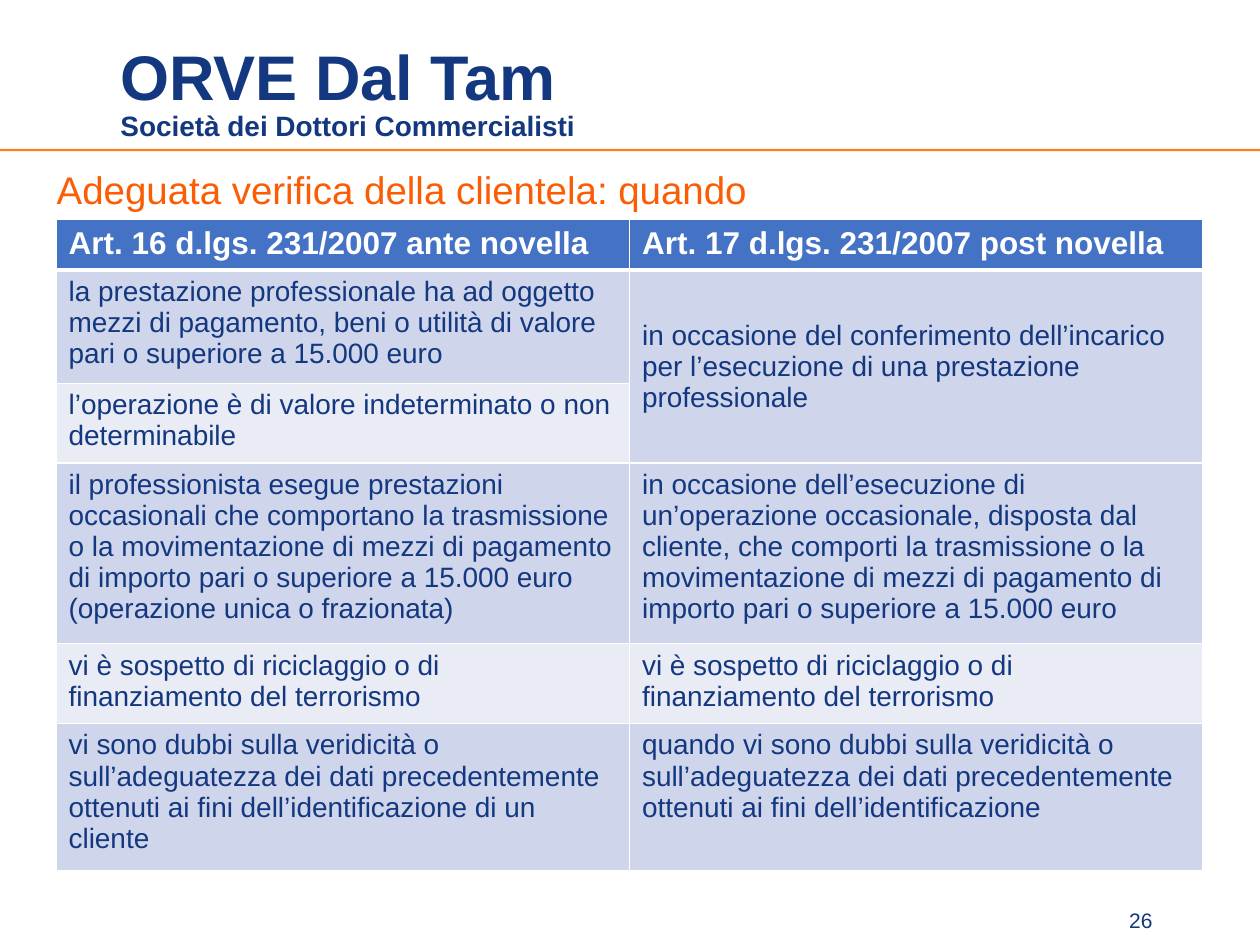
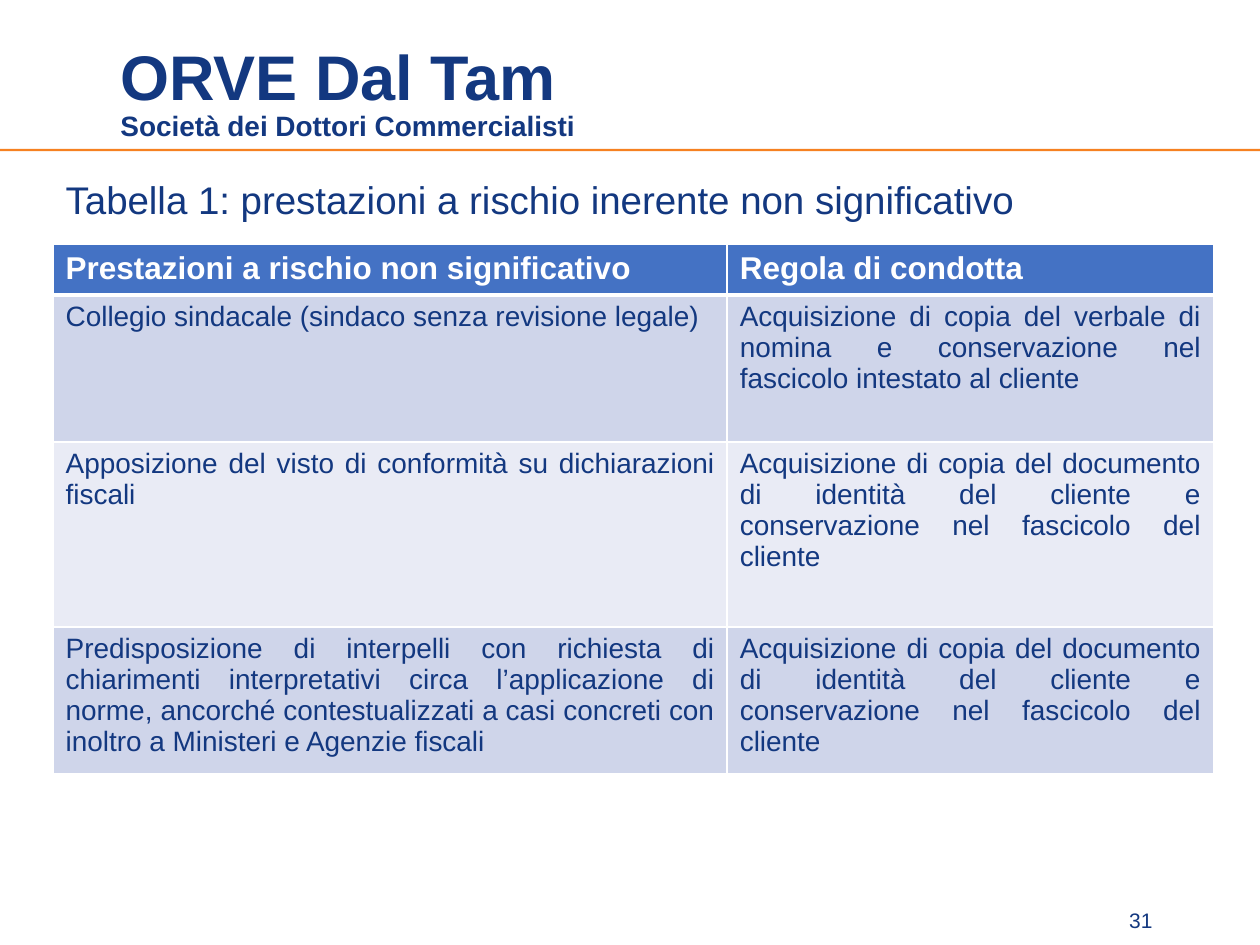
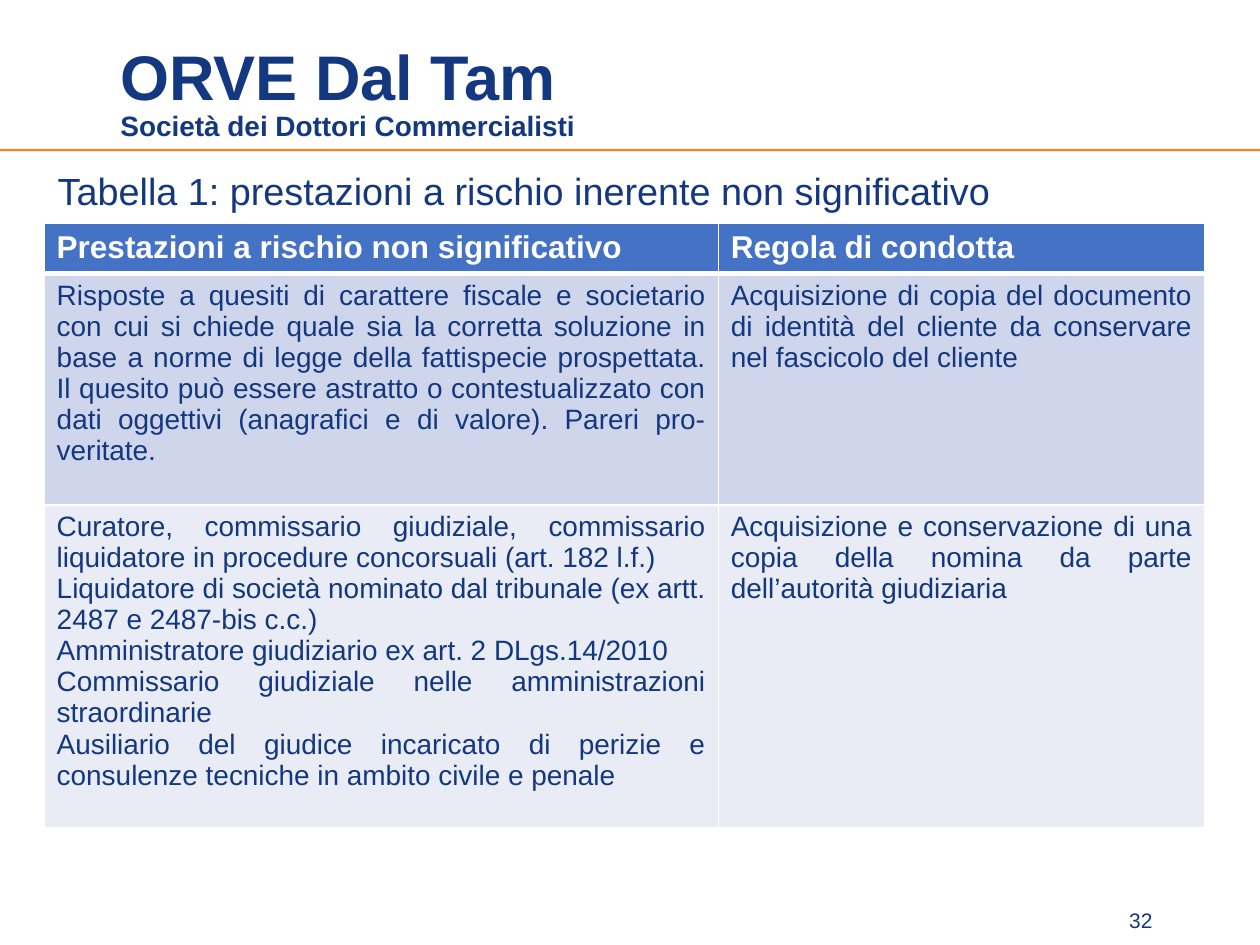
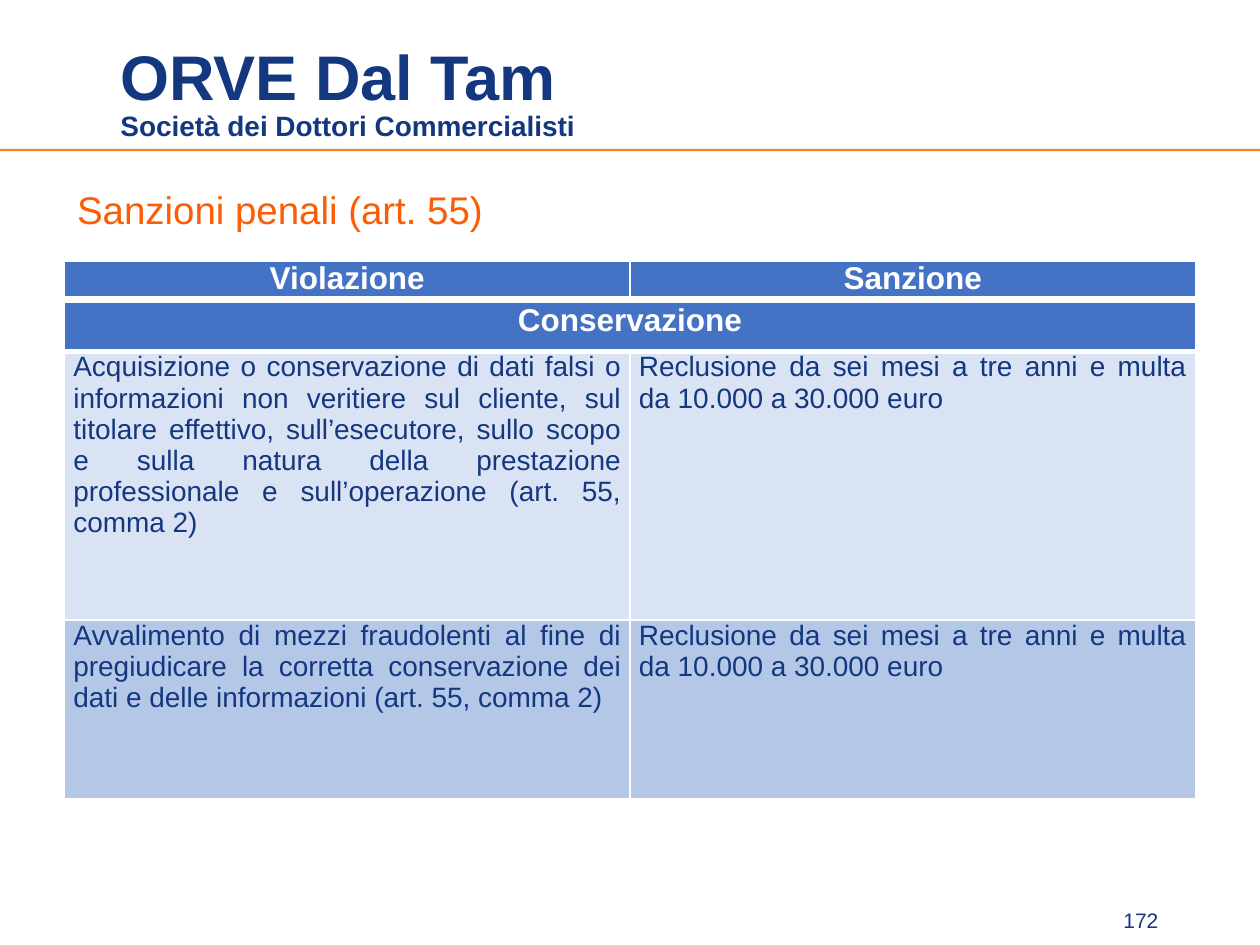
from collections import namedtuple
from dataclasses import dataclass

from lxml.etree import SubElement
from pptx import Presentation
from pptx.dml.color import RGBColor
from pptx.enum.shapes import MSO_SHAPE
from pptx.enum.text import MSO_ANCHOR, MSO_AUTO_SIZE, PP_ALIGN
from pptx.oxml.ns import qn
from pptx.util import Cm, Pt

Box = namedtuple("Box", "left top width height")


@dataclass(frozen=True)
class Theme:
    font: str = "Arial"
    navy: str = "133880"
    orange: str = "FB5D05"
    rule: str = "F68121"
    white: str = "FFFFFF"
    header: str = "4472C4"
    bands: tuple = ("CFD5EA", "E9EBF5")
    penalty_bands: tuple = ("DAE3F3", "B4C7E7")
    brand_size: float = 36
    title_size: float = 22
    header_size: float = 18
    body_size: float = 16
    number_size: float = 12
    thin: float = 1
    thick: float = 3


THEME = Theme()
SLIDE_WIDTH, SLIDE_HEIGHT = 25.4, 19.05
BRAND_BOX = Box(2.18, 1.55, 17.32, 1.47)
RULE_BOX = Box(0, 3, SLIDE_WIDTH, 0.05)
NUMBER_BOX = Box(21.9, 18.19, 2.2, 0.74)
BRAND_LINES = (("ORVE Dal Tam", THEME.brand_size),
               ("Società dei Dottori Commercialisti", THEME.body_size))

RISK_HEADER = ["Prestazioni a rischio non significativo", "Regola di condotta"]
RISK_TITLE = "Tabella 1: prestazioni a rischio inerente non significativo"
RISK_COLUMNS = (13.59, 9.8)
IDENTITY_RULE = ("Acquisizione di copia del documento di identità del cliente "
                 "e conservazione nel fascicolo del cliente")
SUSPICION = "vi è sospetto di riciclaggio o di finanziamento del terrorismo"
PENALTY = "Reclusione da sei mesi a tre anni e multa da 10.000 a 30.000 euro"

# None marks a cell that is joined to the one above it or to its left.
DUE_DILIGENCE = [
    ["Art. 16 d.lgs. 231/2007 ante novella", "Art. 17 d.lgs. 231/2007 post novella"],
    ["la prestazione professionale ha ad oggetto mezzi di pagamento, beni o utilità "
     "di valore pari o superiore a 15.000 euro",
     "in occasione del conferimento dell’incarico per l’esecuzione di una prestazione "
     "professionale"],
    ["l’operazione è di valore indeterminato o non determinabile", None],
    ["il professionista esegue prestazioni occasionali che comportano la trasmissione "
     "o la movimentazione di mezzi di pagamento di importo pari o superiore a 15.000 "
     "euro (operazione unica o frazionata)",
     "in occasione dell’esecuzione di un’operazione occasionale, disposta dal cliente, "
     "che comporti la trasmissione o la movimentazione di mezzi di pagamento di "
     "importo pari o superiore a 15.000 euro"],
    [SUSPICION, SUSPICION],
    ["vi sono dubbi sulla veridicità o sull’adeguatezza dei dati precedentemente "
     "ottenuti ai fini dell’identificazione di un cliente",
     "quando vi sono dubbi sulla veridicità o sull’adeguatezza dei dati "
     "precedentemente ottenuti ai fini dell’identificazione"],
]
LOW_RISK = [
    RISK_HEADER,
    ["Collegio sindacale (sindaco senza revisione legale)",
     "Acquisizione di copia del verbale di nomina e conservazione nel fascicolo "
     "intestato al cliente"],
    ["Apposizione del visto di conformità su dichiarazioni fiscali", IDENTITY_RULE],
    ["Predisposizione di interpelli con richiesta di chiarimenti interpretativi circa "
     "l’applicazione di norme, ancorché contestualizzati a casi concreti con inoltro "
     "a Ministeri e Agenzie fiscali", IDENTITY_RULE],
]
LOW_RISK_CONTINUED = [
    RISK_HEADER,
    ["Risposte a quesiti di carattere fiscale e societario con cui si chiede quale sia "
     "la corretta soluzione in base a norme di legge della fattispecie prospettata. "
     "Il quesito può essere astratto o contestualizzato con dati oggettivi (anagrafici "
     "e di valore). Pareri pro-veritate.",
     "Acquisizione di copia del documento di identità del cliente da conservare nel "
     "fascicolo del cliente"],
    ["Curatore, commissario giudiziale, commissario liquidatore in procedure "
     "concorsuali (art. 182 l.f.)\n"
     "Liquidatore di società nominato dal tribunale (ex artt. 2487 e 2487-bis c.c.)\n"
     "Amministratore giudiziario ex art. 2 DLgs.14/2010\n"
     "Commissario giudiziale nelle amministrazioni straordinarie\n"
     "Ausiliario del giudice incaricato di perizie e consulenze tecniche in ambito "
     "civile e penale",
     "Acquisizione e conservazione di una copia della nomina da parte dell’autorità "
     "giudiziaria"],
]
PENALTY_HEADER = [["Violazione", "Sanzione"]]
PENALTIES = [
    ["Conservazione", None],
    ["Acquisizione o conservazione di dati falsi o informazioni non veritiere sul "
     "cliente, sul titolare effettivo, sull’esecutore, sullo scopo e sulla natura "
     "della prestazione professionale e sull’operazione (art. 55, comma 2)", PENALTY],
    ["Avvalimento di mezzi fraudolenti al fine di pregiudicare la corretta "
     "conservazione dei dati e delle informazioni (art. 55, comma 2)", PENALTY],
]


def cm(box):
    return [Cm(length) for length in box]


def style(paragraph, size, color, bold=False, align=PP_ALIGN.LEFT):
    paragraph.alignment = align
    for run in paragraph.runs:
        run.font.name = THEME.font
        run.font.size = Pt(size)
        run.font.bold = bold
        run.font.color.rgb = RGBColor.from_string(color)


def add_brand(slide, box):
    frame = slide.shapes.add_textbox(*cm(box)).text_frame
    frame.word_wrap = True
    frame.text = "\n".join(text for text, _ in BRAND_LINES)
    for paragraph, (_, size) in zip(frame.paragraphs, BRAND_LINES):
        paragraph.line_spacing = Pt(17)
        style(paragraph, size, THEME.navy, bold=True)


def add_rule(slide, box):
    rule = slide.shapes.add_shape(MSO_SHAPE.RECTANGLE, *cm(box))
    rule.shadow.inherit = False
    rule.fill.solid()
    rule.fill.fore_color.rgb = RGBColor.from_string(THEME.rule)
    rule.line.fill.background()


def add_page_number(slide, box, number):
    frame = slide.shapes.add_textbox(*cm(box)).text_frame
    frame.word_wrap = True
    frame.vertical_anchor = MSO_ANCHOR.BOTTOM
    frame.text = str(number)
    style(frame.paragraphs[0], THEME.number_size, THEME.navy, align=PP_ALIGN.CENTER)


def set_title(slide, box, text, color, size):
    title = slide.shapes.title
    title.left, title.top, title.width, title.height = cm(box)
    frame = title.text_frame
    frame.text = text
    frame.word_wrap = True
    frame.auto_size = MSO_AUTO_SIZE.NONE
    frame.vertical_anchor = MSO_ANCHOR.TOP
    frame.paragraphs[0].line_spacing = 0.9
    style(frame.paragraphs[0], size, color)


def set_borders(cell, top, bottom):
    properties = cell._tc.get_or_add_tcPr()
    widths = {"lnL": THEME.thin, "lnR": THEME.thin, "lnT": top, "lnB": bottom}
    for position, (side, width) in enumerate(widths.items()):
        line = SubElement(properties, qn(f"a:{side}"), w=str(Pt(width)))
        fill = SubElement(line, qn("a:solidFill"))
        SubElement(fill, qn("a:srgbClr"), val=THEME.white)
        properties.insert(position, line)


def join_cells(table, rows):
    for r, row in enumerate(rows):
        for c, text in enumerate(row):
            if text is None:
                origin = table.cell(0, 0) if r == 0 else table.cell(r - 1, c)
                origin.merge(table.cell(r, c))
                origin.vertical_anchor = MSO_ANCHOR.MIDDLE if r else MSO_ANCHOR.TOP


def add_grid(slide, left, top, columns, heights, rows, bands=THEME.bands,
             header_align=PP_ALIGN.LEFT, body_align=PP_ALIGN.JUSTIFY, margins=None):
    """Table with a header row and banded body; margins are (side, top and bottom)."""
    box = Box(left, top, sum(columns), sum(heights))
    table = slide.shapes.add_table(len(rows), len(columns), *cm(box)).table
    for column, width in zip(table.columns, columns):
        column.width = Cm(width)
    for r, (texts, height) in enumerate(zip(rows, heights)):
        table.rows[r].height = Cm(height)
        header = r == 0
        fill = THEME.header if header else bands[(r - 1) % len(bands)]
        for c, text in enumerate(texts):
            cell = table.cell(r, c)
            if margins:
                cell.margin_left = cell.margin_right = Cm(margins[0])
                cell.margin_top = cell.margin_bottom = Cm(margins[1])
            cell.fill.solid()
            cell.fill.fore_color.rgb = RGBColor.from_string(fill)
            set_borders(cell, THEME.thick if r == 1 else THEME.thin,
                        THEME.thick if header else THEME.thin)
            if text is None:
                continue
            cell.text_frame.text = text
            for paragraph in cell.text_frame.paragraphs:
                if header:
                    style(paragraph, THEME.header_size, THEME.white, True, header_align)
                else:
                    style(paragraph, THEME.body_size, THEME.navy, align=body_align)
    join_cells(table, rows)


def add_page(deck, number, title, title_box, color=THEME.navy, size=THEME.title_size):
    slide = deck.slides.add_slide(deck.slide_layouts[5])
    add_rule(slide, RULE_BOX)
    add_brand(slide, BRAND_BOX)
    add_page_number(slide, NUMBER_BOX, number)
    set_title(slide, title_box, title, color, size)
    return slide


def add_penalties(slide, left, top):
    layout = dict(columns=(11.4, 11.4), bands=THEME.penalty_bands,
                  header_align=PP_ALIGN.CENTER, margins=(0.18, 0))
    add_grid(slide, left, top + 0.84, heights=(0.99, 5.41, 3.61), rows=PENALTIES, **layout)
    add_grid(slide, left, top, heights=(0.76,), rows=PENALTY_HEADER, **layout)


def main():
    deck = Presentation()
    deck.slide_width, deck.slide_height = Cm(SLIDE_WIDTH), Cm(SLIDE_HEIGHT)

    slide = add_page(deck, 26, "Adeguata verifica della clientela: quando",
                     Box(0.89, 3.33, 24.21, 1.4), THEME.orange)
    add_grid(slide, 1.13, 4.42, (11.56, 11.56), (1.02, 2.15, 1.51, 3.39, 1.51, 2.81),
             DUE_DILIGENCE, body_align=PP_ALIGN.LEFT)

    slide = add_page(deck, 31, RISK_TITLE, Box(1.07, 3.53, 23.32, 1.4))
    add_grid(slide, 1.07, 4.93, RISK_COLUMNS, (0.99, 2.96, 3.73, 2.96), LOW_RISK)

    slide = add_page(deck, 32, RISK_TITLE, Box(0.91, 3.35, 24.21, 1.19), size=21.6)
    add_grid(slide, 0.89, 4.5, RISK_COLUMNS, (0.95, 4.66, 6.51), LOW_RISK_CONTINUED)

    slide = add_page(deck, 172, "Sanzioni penali (art. 55)",
                     Box(1.3, 3.73, 24.1, 1.19), THEME.orange)
    add_penalties(slide, 1.3, 5.26)

    deck.save("out.pptx")


if __name__ == "__main__":
    main()
